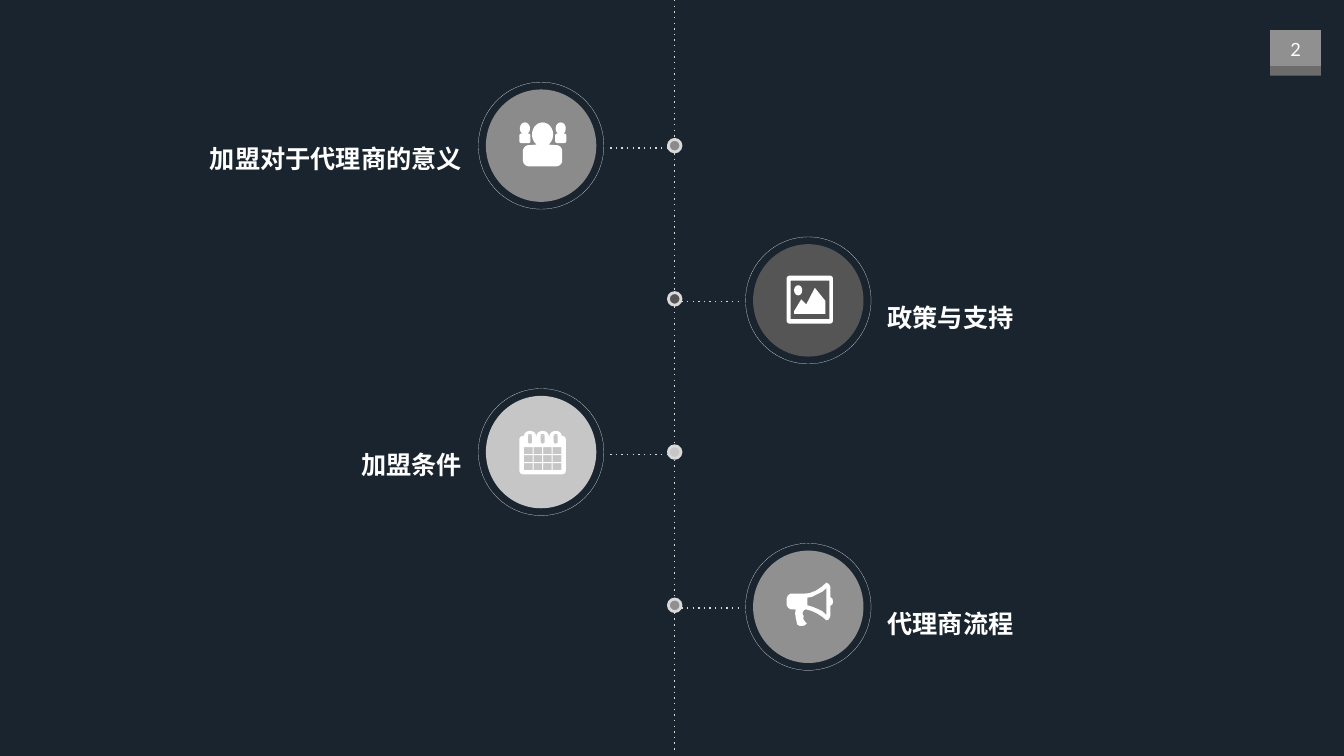
from dataclasses import dataclass
from math import cos, radians, sin

from lxml import etree
from pptx import Presentation
from pptx import util as u
from pptx.dml.color import RGBColor
from pptx.enum import shapes, text
from pptx.oxml.ns import qn

Point = tuple[float, float]
Contour = list[Point]

COLORS = {
    "night": "19242F", "white": "FFFFFF", "dots": "D9D9D9",
    "meaning": "8B8B8B", "support": "555555", "terms": "C6C6C6",
    "process": "909090", "badge": "909090", "badge_edge": "6C6C6C",
}
FONT = "Lato"
WIDTH, HEIGHT = 26.66, 15
SPINE = WIDTH * 0.502
ROW, FIRST_ROW = 3.04, 2.89
DISC_SHIFT, LABEL_SHIFT = 2.65, 4.02
LEFT, RIGHT = -1, 1


@dataclass
class Milestone:
    label: str
    color: str
    side: int
    label_width: float
    label_height: float
    icon: list[Contour]
    icon_rise: float


def arc(cx: float, cy: float, rx: float, ry: float,
        start: float = 0, end: float = 360) -> Contour:
    steps = max(4, round((end - start) / 12))
    angles = [radians(start + (end - start) * i / steps) for i in range(steps + 1)]
    return [(cx + rx * cos(a), cy + ry * sin(a)) for a in angles]


def box(left: float, top: float, right: float, bottom: float,
        radius: float = 0) -> Contour:
    """Rectangle with rounded corners, clockwise from the top right."""
    if not radius:
        return [(right, top), (right, bottom), (left, bottom), (left, top)]
    corners = [(right - radius, top + radius, 270), (right - radius, bottom - radius, 0),
               (left + radius, bottom - radius, 90), (left + radius, top + radius, 180)]
    return [point for x, y, start in corners
            for point in arc(x, y, radius, radius, start, start + 90)]


def person(cx: float, rx: float, ry: float, half: float,
           neck: float, bottom: float, radius: float) -> Contour:
    head = arc(cx, ry, rx, ry, 124, 416)
    return head + box(cx - half, neck, cx + half, bottom, radius)


def people_icon() -> list[Contour]:
    sides = [person(cx, 0.1, 0.12, 0.11, 0.22, 0.41, 0.04) for cx in (0.11, 0.82)]
    return [person(0.46, 0.21, 0.24, 0.39, 0.45, 0.87, 0.12), *sides]


def picture_icon() -> list[Contour]:
    mountains = [(0.77, 0.76), (0.15, 0.76), (0.15, 0.7), (0.29, 0.47),
                 (0.39, 0.57), (0.56, 0.24), (0.77, 0.5)]
    return [box(0, 0, 0.92, 0.95, 0.06), box(0.08, 0.1, 0.85, 0.86),
            arc(0.23, 0.29, 0.08, 0.1), mountains]


def calendar_icon() -> list[Contour]:
    contours = [box(0, 0.1, 0.92, 0.86, 0.07)]
    for cx in (0.21, 0.46, 0.72):
        contours.append(arc(cx, 0.1, 0.12, 0.1, 180, 360))
        contours.append(box(cx - 0.04, 0.06, cx + 0.04, 0.25, 0.03))
    for row in range(3):
        for column in range(4):
            x, y = 0.09 + 0.19 * column, 0.32 + 0.16 * row
            contours.append(box(x, y, x + 0.17, y + 0.14))
    return contours


def megaphone_icon() -> list[Contour]:
    body = [
        (0.92, 0.38), (0.91, 0.43), (0.87, 0.46), (0.87, 0.66), (0.84, 0.73),
        (0.79, 0.75), (0.71, 0.68), (0.6, 0.61), (0.49, 0.56), (0.38, 0.53),
        (0.34, 0.55), (0.32, 0.59), (0.32, 0.63), (0.34, 0.66), (0.33, 0.71),
        (0.34, 0.74), (0.37, 0.78), (0.4, 0.81), (0.36, 0.85), (0.31, 0.86),
        (0.26, 0.86), (0.21, 0.83), (0.18, 0.69), (0.17, 0.61), (0.18, 0.53),
        (0.08, 0.53), (0.03, 0.5), (0, 0.44), (0, 0.31), (0.03, 0.25),
        (0.08, 0.22), (0.33, 0.22), (0.45, 0.21), (0.58, 0.16), (0.7, 0.08),
        (0.79, 0), (0.84, 0.03), (0.87, 0.09), (0.87, 0.29), (0.91, 0.32)]
    horn = [(0.79, 0.11), (0.71, 0.18), (0.61, 0.23), (0.51, 0.28), (0.41, 0.3),
            (0.41, 0.45), (0.51, 0.48), (0.61, 0.52), (0.71, 0.57), (0.79, 0.64)]
    return [body, horn]


MILESTONES = [
    Milestone("加盟对于代理商的意义", "meaning", LEFT, 5.81, 0.93, people_icon(), 0.46),
    Milestone("政策与支持", "support", RIGHT, 4.78, 0.87, picture_icon(), 0.46),
    Milestone("加盟条件", "terms", LEFT, 4.78, 0.87, calendar_icon(), 0.42),
    Milestone("代理商流程", "process", RIGHT, 4.78, 0.87, megaphone_icon(), 0.45),
]


def rgb(name: str) -> RGBColor:
    return RGBColor.from_string(COLORS[name])


def set_line(shape, color: str, width: float, dash: str = "solid") -> None:
    shape.line.color.rgb = rgb(color)
    shape.line.width = u.Pt(width)
    outline = shape.element.spPr.find(qn("a:ln"))
    etree.SubElement(outline, qn("a:prstDash"), val=dash)


def add_block(slide, kind, left: float, top: float, width: float, height: float,
              fill: str | None):
    block = slide.shapes.add_shape(kind, *map(u.Inches, (left, top, width, height)))
    block.shadow.inherit = False
    if fill:
        block.fill.solid()
        block.fill.fore_color.rgb = rgb(fill)
    else:
        block.fill.background()
    block.line.fill.background()
    return block


def add_oval(slide, cx: float, cy: float, width: float, height: float,
             fill: str | None):
    return add_block(slide, shapes.MSO_SHAPE.OVAL, cx - width / 2, cy - height / 2,
                     width, height, fill)


def add_dotted(slide, start: Point, end: Point) -> None:
    dotted = slide.shapes.add_connector(
        shapes.MSO_CONNECTOR.STRAIGHT, *map(u.Inches, (*start, *end)))
    set_line(dotted, "dots", 2, "dot")
    etree.SubElement(dotted.element.spPr, qn("a:effectLst"))


def add_icon(slide, left: float, top: float, contours: list[Contour]) -> None:
    scaled = [[(u.Inches(x), u.Inches(y)) for x, y in contour] for contour in contours]
    builder = slide.shapes.build_freeform(*scaled[0][0])
    for index, contour in enumerate(scaled):
        if index:
            builder.move_to(*contour[0])
        builder.add_line_segments(contour[1:], close=True)
    icon = builder.convert_to_shape(u.Inches(left), u.Inches(top))
    icon.shadow.inherit = False
    icon.fill.solid()
    icon.fill.fore_color.rgb = rgb("white")
    icon.line.fill.background()


def add_text(slide, left: float, top: float, width: float, height: float,
             words: str, size: float, align, bold: bool = False, wrap: bool = True):
    frame = slide.shapes.add_textbox(
        *map(u.Inches, (left, top, width, height))).text_frame
    frame.margin_left = frame.margin_right = u.Inches(0.2)
    frame.margin_top = frame.margin_bottom = u.Inches(0.1)
    frame.word_wrap = wrap
    frame.auto_size = text.MSO_AUTO_SIZE.SHAPE_TO_FIT_TEXT
    paragraph = frame.paragraphs[0]
    paragraph.alignment = align
    run = paragraph.add_run()
    run.text = words
    run.font.name, run.font.size, run.font.bold = FONT, u.Pt(size), bold
    run.font.color.rgb = rgb("white")
    return paragraph


def add_badge(slide, number: str) -> None:
    left, width = WIDTH * 0.945, 1.01
    add_block(slide, shapes.MSO_SHAPE.RECTANGLE, left, 0.6, width, 0.8, "badge")
    add_block(slide, shapes.MSO_SHAPE.RECTANGLE, left, 1.31, width, 0.19, "badge_edge")
    add_text(slide, left + 0.08, 0.66, 0.85, 0.64, number, 26,
             text.PP_ALIGN.CENTER, wrap=False)


def add_milestone(slide, item: Milestone, y: float) -> None:
    on_left = item.side == LEFT
    disc_x = SPINE + item.side * DISC_SHIFT
    disc_y = y if on_left else y + 0.03
    add_oval(slide, disc_x, disc_y, 2.19, 2.23, item.color)
    set_line(add_oval(slide, disc_x, disc_y, 2.49, 2.52, None), "white", 0.25, "sysDash")
    add_icon(slide, disc_x - 0.43, y - item.icon_rise, item.icon)

    set_line(add_oval(slide, SPINE, y, 0.25, 0.25, item.color), "dots", 4)
    near, far = sorted(SPINE + item.side * reach for reach in (0.13, 1.28))
    add_dotted(slide, (near, y + 0.05), (far, y + 0.05))

    edge = SPINE + item.side * LABEL_SHIFT
    label = add_text(slide, edge - item.label_width if on_left else edge,
                     y - (0.27 if on_left else 0.16), item.label_width,
                     item.label_height, item.label, 36,
                     text.PP_ALIGN.RIGHT if on_left else text.PP_ALIGN.LEFT, bold=True)
    label.line_spacing = 1.2
    label.space_before = u.Pt(17)


def main() -> None:
    deck = Presentation()
    deck.slide_width, deck.slide_height = u.Inches(WIDTH), u.Inches(HEIGHT)
    slide = deck.slides.add_slide(deck.slide_layouts[6])
    slide.background.fill.solid()
    slide.background.fill.fore_color.rgb = rgb("night")
    add_badge(slide, "2")
    for index in range(len(MILESTONES) + 1):
        add_dotted(slide, (SPINE, ROW * index), (SPINE, ROW * index + 2.74))
    for index, item in enumerate(MILESTONES):
        add_milestone(slide, item, FIRST_ROW + ROW * index)
    deck.save("out.pptx")


if __name__ == "__main__":
    main()
